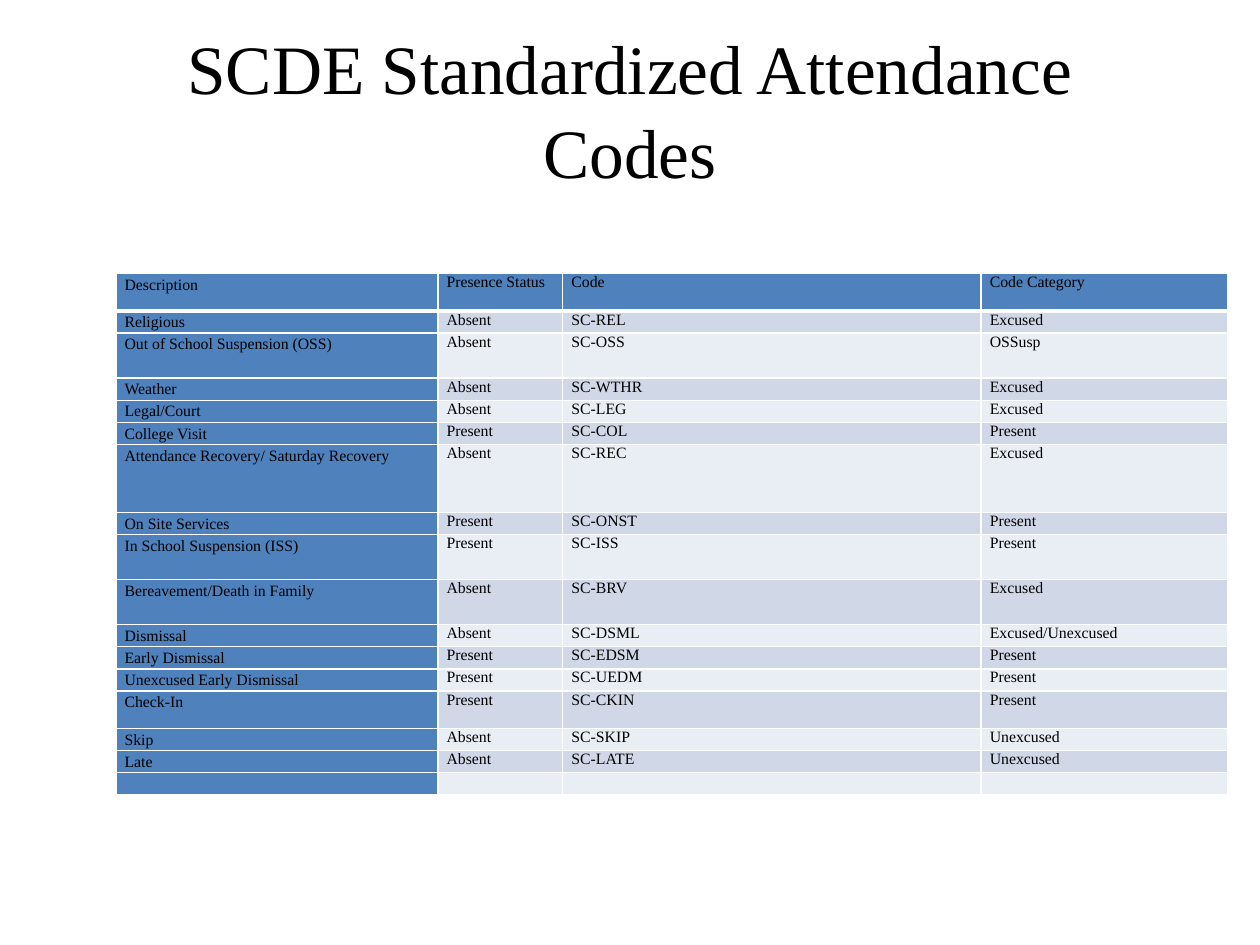
from pptx import Presentation
from pptx.dml.color import RGBColor as RGB
from pptx.enum.text import MSO_ANCHOR as Anchor, PP_ALIGN as Align
from pptx.oxml.ns import qn
from pptx.util import Pt
from lxml.etree import SubElement as Sub

TITLE = "SCDE Standardized Attendance Codes"
HEAD = ("Description", "Presence Status", "Code", "Code Category")
ONE, MID, TWO, THREE = 12.65, 21.4, 25.7, 38.9  # row heights
ROWS = [
    (MID, HEAD),
    (ONE, ("Religious", "Absent", "SC-REL", "Excused")),
    (TWO, ("Out of School Suspension (OSS)", "Absent", "SC-OSS", "OSSusp")),
    (ONE, ("Weather", "Absent", "SC-WTHR", "Excused")),
    (ONE, ("Legal/Court", "Absent", "SC-LEG", "Excused")),
    (ONE, ("College Visit", "Present", "SC-COL", "Present")),
    (THREE, ("Attendance Recovery/ Saturday Recovery", "Absent", "SC-REC", "Excused")),
    (ONE, ("On Site Services", "Present", "SC-ONST", "Present")),
    (TWO, ("In School Suspension (ISS)", "Present", "SC-ISS", "Present")),
    (TWO, ("Bereavement/Death in Family", "Absent", "SC-BRV", "Excused")),
    (ONE, ("Dismissal", "Absent", "SC-DSML", "Excused/Unexcused")),
    (ONE, ("Early Dismissal", "Present", "SC-EDSM", "Present")),
    (ONE, ("Unexcused Early Dismissal", "Present", "SC-UEDM", "Present")),
    (MID, ("Check-In", "Present", "SC-CKIN", "Present")),
    (ONE, ("Skip", "Absent", "SC-SKIP", "Unexcused")),
    (ONE, ("Late", "Absent", "SC-LATE", "Unexcused")),
    (ONE, ("", "", "", "")),
]
COLS = (184, 71.4, 239.1, 141.2)
COLOR = {"text": "000000", "head": "4F81BD", "odd": "D0D8E8",
         "even": "E9EDF4", "line": "FFFFFF"}
FONT = "Times New Roman"


def style(para, size):
    for run in para.runs:
        run.font.name = FONT
        run.font.size = Pt(size)
        run.font.color.rgb = RGB.from_string(COLOR["text"])


def border(cell, side, width):
    line = Sub(cell._tc.get_or_add_tcPr(), qn(f"a:ln{side}"), w=str(Pt(width)))
    fill = Sub(line, qn("a:solidFill"))
    Sub(fill, qn("a:srgbClr"), val=COLOR["line"])


def fill_cell(cell, text, row, col):
    # Borders come before the fill in the cell properties
    for side in "LRTB":
        thick = (row == 0 and side == "B") or (row == 1 and side == "T")
        border(cell, side, 3 if thick else 1)
    tone = "head" if row == 0 or col == 0 else "odd" if row % 2 else "even"
    cell.fill.solid()
    cell.fill.fore_color.rgb = RGB.from_string(COLOR[tone])
    cell.margin_left = cell.margin_right = Pt(5)
    cell.margin_top = cell.margin_bottom = 0
    para = cell.text_frame.paragraphs[0]
    if text:
        para.text = text
        style(para, 9)
        if col == 0:
            para.line_spacing = 1.15
    else:
        # An empty cell needs a small font to keep its row low
        Sub(para._p, qn("a:endParaRPr"), sz="900")


prs = Presentation()
prs.slide_width, prs.slide_height = Pt(720), Pt(540)
slide = prs.slides.add_slide(prs.slide_layouts[6])

# Title, growing upward from the bottom of its box
box = slide.shapes.add_textbox(Pt(60), Pt(60), Pt(600), Pt(50))
frame = box.text_frame
frame.word_wrap = True
frame.vertical_anchor = Anchor.BOTTOM
frame.margin_top = frame.margin_bottom = 0
frame.text = TITLE
title = frame.paragraphs[0]
title.alignment = Align.CENTER
title.line_spacing = Pt(48)
style(title, 39.6)

# Table of codes
high = sum(h for h, _ in ROWS)
table = slide.shapes.add_table(len(ROWS), len(COLS), Pt(66.2), Pt(156.4),
                               Pt(sum(COLS)), Pt(high)).table
for col, wide in zip(table.columns, COLS):
    col.width = Pt(wide)
for r, (tall, texts) in enumerate(ROWS):
    table.rows[r].height = Pt(tall)
    for c, text in enumerate(texts):
        fill_cell(table.cell(r, c), text, r, c)

prs.save("out.pptx")
